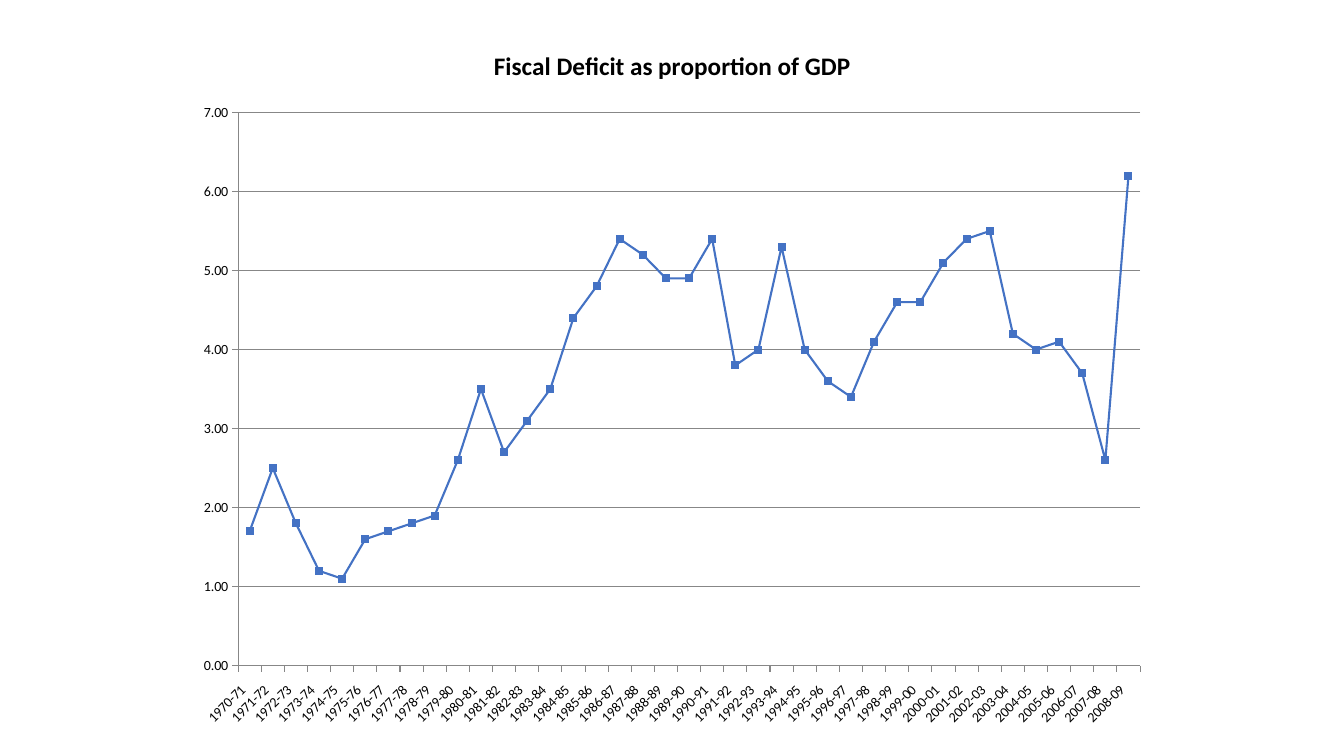
import pptx
import pptx.chart.data
import pptx.dml.color
import pptx.enum.chart
import pptx.oxml
import pptx.oxml.ns
import pptx.util

Cm = pptx.util.Cm
Pt = pptx.util.Pt
RGB = pptx.dml.color.RGBColor
qn = pptx.oxml.ns.qn

HEADING = "Fiscal Deficit as proportion of GDP"
FIRST_YEAR = 1970
YEAR_FIELD_WIDTH = 10
DEFICITS = [
    1.7, 2.5, 1.8, 1.2, 1.1, 1.6, 1.7, 1.8, 1.9, 2.6,
    3.5, 2.7, 3.1, 3.5, 4.4, 4.8, 5.4, 5.2, 4.9, 4.9,
    5.4, 3.8, 4.0, 5.3, 4.0, 3.6, 3.4, 4.1, 4.6, 4.6,
    5.1, 5.4, 5.5, 4.2, 4.0, 4.1, 3.7, 2.6, 6.2,
]
THEME = {
    "font": "Calibri",
    "heading_size": Pt(18),
    "label_size": Pt(10),
    "text": RGB(0, 0, 0),
    "deficit": RGB(0x44, 0x72, 0xC4),
    "rule": RGB(0x87, 0x87, 0x87),
}
SLIDE_WIDTH, SLIDE_HEIGHT = Cm(33.87), Cm(19.05)
CHART_WIDTH, CHART_HEIGHT = Cm(24.55), Cm(17.99)
HEADING_PLACE = {"x": 0.313, "y": 0.026}
PLOT_PLACE = {"x": 0.055, "y": 0.122, "w": 0.926, "h": 0.775}


def style_font(font, size, bold=False):
    font.name = THEME["font"]
    font.size = size
    font.bold = bold
    font.color.rgb = THEME["text"]


def style_line(line, color, width):
    line.color.rgb = color
    line.width = width


def place(element, fractions, inner=False):
    parts = ['<c:layoutTarget val="inner"/>'] if inner else []
    parts += [f'<c:{key}Mode val="edge"/>' for key in "xy"]
    parts += [f'<c:{key} val="{value}"/>' for key, value in fractions.items()]
    layout = pptx.oxml.parse_xml(
        f'<c:layout {pptx.oxml.ns.nsdecls("c")}><c:manualLayout>'
        f'{"".join(parts)}</c:manualLayout></c:layout>')
    for old in element.findall(qn("c:layout")):
        element.remove(old)
    element.insert(0 if inner else 1, layout)


def style_axis(axis):
    axis.major_tick_mark = pptx.enum.chart.XL_TICK_MARK.OUTSIDE
    axis.minor_tick_mark = pptx.enum.chart.XL_TICK_MARK.NONE
    style_font(axis.tick_labels.font, THEME["label_size"])
    style_line(axis.format.line, THEME["rule"], Pt(0.75))


def main():
    deck = pptx.Presentation()
    deck.slide_width, deck.slide_height = SLIDE_WIDTH, SLIDE_HEIGHT
    slide = deck.slides.add_slide(deck.slide_layouts[6])

    budget = pptx.chart.data.CategoryChartData(number_format="0.00")
    budget.categories = [
        f"{year}-{(year + 1) % 100:02d}".ljust(YEAR_FIELD_WIDTH)
        for year in range(FIRST_YEAR, FIRST_YEAR + len(DEFICITS))
    ]
    budget.add_series(HEADING, DEFICITS)
    chart = slide.shapes.add_chart(
        pptx.enum.chart.XL_CHART_TYPE.LINE_MARKERS,
        Cm(4.65), Cm(0.64), CHART_WIDTH, CHART_HEIGHT, budget).chart
    chart.has_legend = False
    style_font(chart.font, THEME["label_size"])

    chart.has_title = True
    heading = chart.chart_title.text_frame.paragraphs[0].add_run()
    heading.text = HEADING
    style_font(heading.font, THEME["heading_size"], bold=True)
    chart.chart_title.include_in_layout = False
    place(chart.chart_title._element, HEADING_PLACE)

    years, shares = chart.category_axis, chart.value_axis
    for axis in (years, shares):
        style_axis(axis)
    years._element.find(qn("c:txPr")).find(qn("a:bodyPr")).set("rot", "-2700000")
    shares.minimum_scale, shares.maximum_scale, shares.major_unit = 0, 7, 1
    shares.tick_labels.number_format = "0.00"
    shares.tick_labels.number_format_is_linked = False
    shares.has_major_gridlines = True
    style_line(shares.major_gridlines.format.line, THEME["rule"], Pt(0.75))

    plot = chart.plots[0]
    plot.vary_by_categories = False
    place(plot._element.getparent(), PLOT_PLACE, inner=True)
    deficit = plot.series[0]
    deficit.smooth = False
    style_line(deficit.format.line, THEME["deficit"], Pt(1.5))
    deficit.marker.style = pptx.enum.chart.XL_MARKER_STYLE.SQUARE
    deficit.marker.size = 5
    deficit.marker.format.fill.solid()
    deficit.marker.format.fill.fore_color.rgb = THEME["deficit"]
    style_line(deficit.marker.format.line, THEME["deficit"], Pt(0.75))

    deck.save("out.pptx")


if __name__ == "__main__":
    main()
